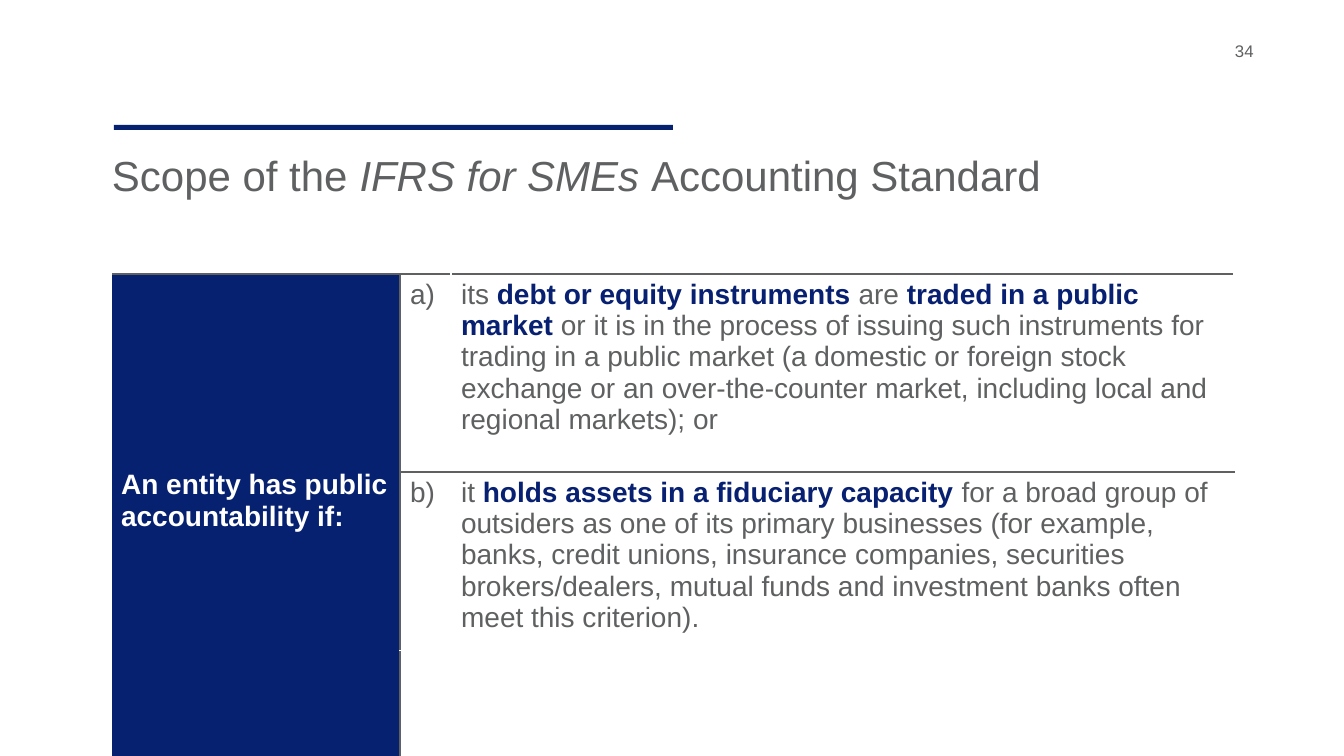
import pptx
import pptx.util
import pptx.dml.color
import pptx.enum.shapes
import pptx.enum.text
import pptx.oxml.ns
from lxml import etree

NAVY, ACCENT, GREY, WHITE = "072171", "072071", "5F6061", "FFFFFF"
PLAIN = {}
STRONG = {"bold": True, "color": ACCENT}

TITLE = [
    ("Scope of the ", PLAIN),
    ("IFRS for SMEs ", {"italic": True}),
    ("Accounting Standard", PLAIN),
]
PAGE_NUMBER = "34"
CONDITION = "An entity has public accountability if:"
CRITERIA = [
    ("a)", [
        ("its ", PLAIN),
        ("debt or equity instruments ", STRONG),
        ("are ", PLAIN),
        ("traded in a public market ", STRONG),
        ("or it is in the process of issuing such instruments for trading in a public market "
         "(a domestic or foreign stock exchange or an over-the-counter market, "
         "including local and regional markets); or", PLAIN),
    ]),
    ("b)", [
        ("it ", PLAIN),
        ("holds assets in a fiduciary capacity ", STRONG),
        ("for a broad group of outsiders as one of its primary businesses (for example, "
         "banks, credit unions, insurance companies, securities brokers/dealers, "
         "mutual funds and investment banks often meet this criterion).", PLAIN),
    ]),
]

SLIDE_SIZE = (1344, 756)
BAR_BOX = (114, 125, 559, 5)
TITLE_BOX = (112, 149, 985, 126)
NUMBER_BOX = (1235, 41, 68, 29)
TABLE_LEFT, TABLE_TOP = 111, 274
COLUMN_WIDTHS = [289, 51, 783]
ROW_HEIGHTS = [198, 166, 118]
ROW_EDGES = [GREY, GREY, WHITE, WHITE]
COLUMN_EDGES = [WHITE, GREY, WHITE, WHITE]
CONDITION_LIFT = 68


def px(length):
    return pptx.util.Emu(round(length * 914400 / 100.8))


def box(bounds):
    return [px(length) for length in bounds]


def rgb(color):
    return pptx.dml.color.RGBColor.from_string(color)


def add_text(frame, text, size=20, color=GREY, bold=False, italic=False):
    run = frame.paragraphs[0].add_run()
    run.text = text
    run.font.name = "Arial"
    run.font.size = pptx.util.Pt(size)
    run.font.bold = bold
    run.font.italic = italic
    run.font.color.rgb = rgb(color)


def clear_insets(frame):
    frame.margin_left = frame.margin_right = frame.margin_top = frame.margin_bottom = 0
    frame.word_wrap = True
    frame.vertical_anchor = pptx.enum.text.MSO_ANCHOR.TOP


def set_borders(cell, **edges):
    properties = cell._tc.get_or_add_tcPr()
    for side, color in edges.items():
        line = etree.SubElement(properties, pptx.oxml.ns.qn("a:ln" + side), w="12700")
        fill = etree.SubElement(line, pptx.oxml.ns.qn("a:solidFill"))
        etree.SubElement(fill, pptx.oxml.ns.qn("a:srgbClr"), val=color)


def add_criteria_table(slide):
    bounds = (TABLE_LEFT, TABLE_TOP, sum(COLUMN_WIDTHS), sum(ROW_HEIGHTS))
    table = slide.shapes.add_table(len(ROW_HEIGHTS), len(COLUMN_WIDTHS), *box(bounds)).table
    table.first_row = table.horz_banding = False
    for column, width in zip(table.columns, COLUMN_WIDTHS):
        column.width = px(width)
    for r, height in enumerate(ROW_HEIGHTS):
        table.rows[r].height = px(height)
        for c in range(len(COLUMN_WIDTHS)):
            cell = table.cell(r, c)
            set_borders(cell, L=COLUMN_EDGES[c], R=COLUMN_EDGES[c + 1],
                        T=ROW_EDGES[r], B=ROW_EDGES[r + 1])
            cell.fill.background()

    condition = table.cell(0, 0)
    condition.merge(table.cell(len(ROW_HEIGHTS) - 1, 0))
    condition.fill.solid()
    condition.fill.fore_color.rgb = rgb(NAVY)
    condition.vertical_anchor = pptx.enum.text.MSO_ANCHOR.MIDDLE
    condition.margin_bottom = px(CONDITION_LIFT)
    add_text(condition.text_frame, CONDITION, color=WHITE, bold=True)

    for r, (letter, criterion) in enumerate(CRITERIA):
        add_text(table.cell(r, 1).text_frame, letter)
        for text, style in criterion:
            add_text(table.cell(r, 2).text_frame, text, **style)


def main():
    deck = pptx.Presentation()
    deck.slide_width, deck.slide_height = box(SLIDE_SIZE)
    slide = deck.slides.add_slide(deck.slide_layouts[5])

    bar = slide.shapes.add_shape(pptx.enum.shapes.MSO_SHAPE.RECTANGLE, *box(BAR_BOX))
    bar.shadow.inherit = False
    bar.fill.solid()
    bar.fill.fore_color.rgb = rgb(NAVY)
    bar.line.fill.background()

    title = slide.shapes.title
    title.left, title.top, title.width, title.height = box(TITLE_BOX)
    clear_insets(title.text_frame)
    title.text_frame.paragraphs[0].alignment = pptx.enum.text.PP_ALIGN.LEFT
    for text, style in TITLE:
        add_text(title.text_frame, text, size=30, **style)

    number = slide.shapes.add_textbox(*box(NUMBER_BOX))
    clear_insets(number.text_frame)
    add_text(number.text_frame, PAGE_NUMBER, size=12)

    add_criteria_table(slide)
    deck.save("out.pptx")


if __name__ == "__main__":
    main()
